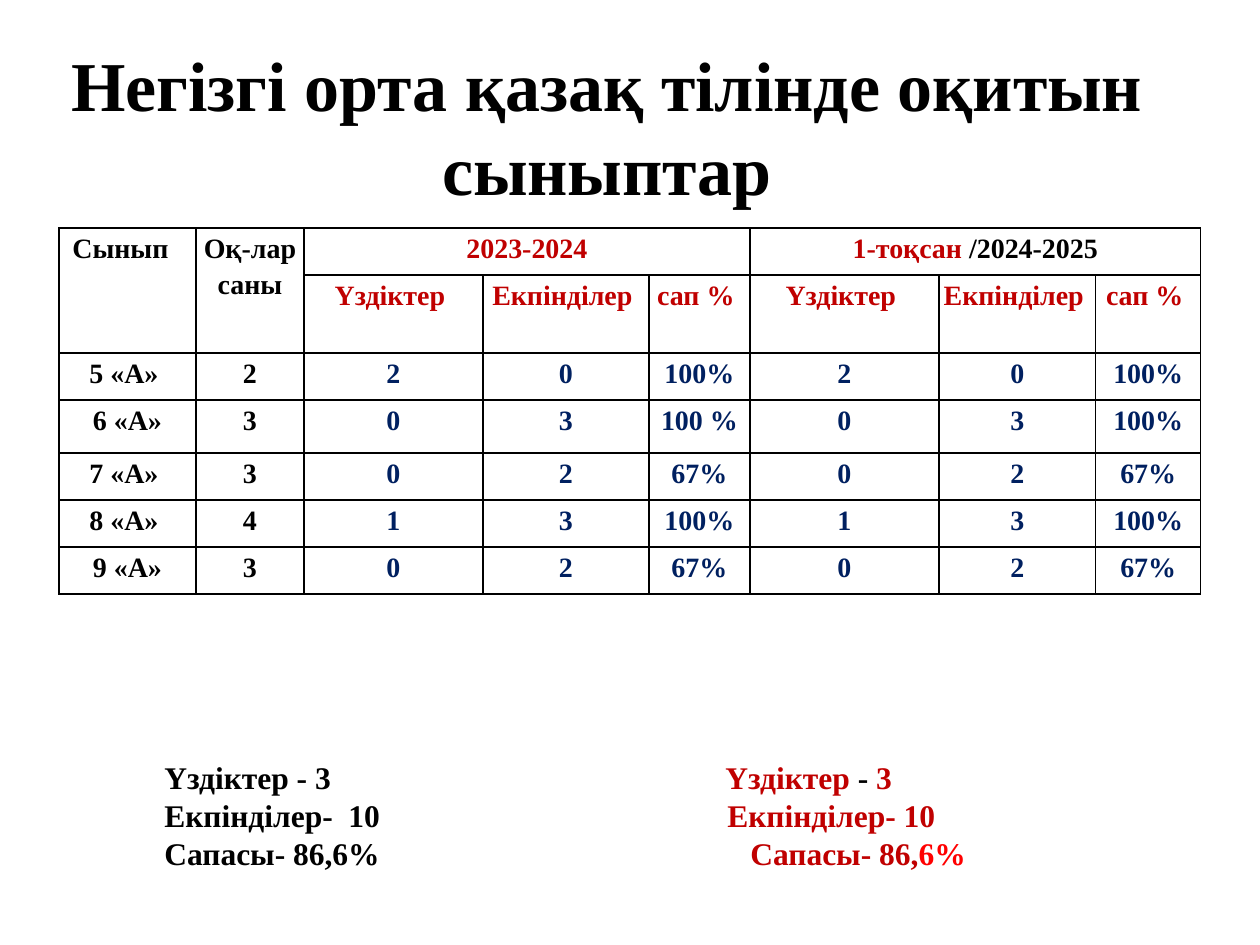
from dataclasses import dataclass

import pptx
import pptx.dml.color
import pptx.enum.text
import pptx.oxml
import pptx.oxml.ns
import pptx.util

PX = 914400 // 126
FONT = "Times New Roman"
COLORS = {"black": "000000", "crimson": "C00000", "navy": "002060", "red": "FF0000"}


@dataclass
class Span:
    text: str
    color: str = "black"


@dataclass
class Cell:
    row: int
    column: int
    spans: list[Span]
    row_span: int = 1
    column_span: int = 1
    right_margin: int = 4


@dataclass
class SummaryLine:
    total: str
    tab: int
    quarter: list[Span]


def px(length: int) -> int:
    return pptx.util.Emu(length * PX)


def add_spans(para, spans: list[Span], size: int) -> None:
    for span in spans:
        run = para.add_run()
        run.text = span.text
        run.font.name = FONT
        run.font.size = pptx.util.Pt(size)
        run.font.bold = True
        run.font.color.rgb = pptx.dml.color.RGBColor.from_string(COLORS[span.color])


def add_box(page, left: int, top: int, width: int, height: int):
    box = page.shapes.add_textbox(px(left), px(top), px(width), px(height))
    box.text_frame.word_wrap = True
    return box.text_frame


def add_tab_stop(para, position: int) -> None:
    tabs = pptx.oxml.parse_xml(
        f'<a:tabLst {pptx.oxml.ns.nsdecls("a")}><a:tab pos="{px(position)}" algn="l"/></a:tabLst>'
    )
    para._p.get_or_add_pPr().append(tabs)


def style_cell(cell) -> None:
    properties = cell._tc.get_or_add_tcPr()
    for side in ("lnL", "lnR", "lnT", "lnB"):
        properties.append(pptx.oxml.parse_xml(
            f'<a:{side} {pptx.oxml.ns.nsdecls("a")} w="12700"><a:solidFill>'
            f'<a:srgbClr val="{COLORS["black"]}"/></a:solidFill></a:{side}>'
        ))
    cell.fill.background()
    cell.margin_left = cell.margin_right = px(4)
    cell.margin_top, cell.margin_bottom = px(1), 0


def fill_cell(table, item: Cell) -> None:
    cell = table.cell(item.row, item.column)
    if item.row_span * item.column_span > 1:
        cell.merge(table.cell(item.row + item.row_span - 1,
                              item.column + item.column_span - 1))
    cell.margin_right = px(item.right_margin)
    para = cell.text_frame.paragraphs[0]
    para.alignment = pptx.enum.text.PP_ALIGN.CENTER
    para.line_spacing = 1.15
    add_spans(para, item.spans, 16)


# Table content
COLUMN_WIDTHS = [137, 108, 179, 166, 101, 189, 157, 105]
ROW_HEIGHTS = [47, 78, 47, 53, 47, 47, 47]
MEASURES = ["Үздіктер ", "Екпінділер ", "сап % "]
CLASSES = [
    ["5 «А» ", "2", "2", "0", "100%", "2", "0", "100%"],
    ["6 «А»", "3", "0", "3", "100 %", "0", "3", "100%"],
    ["7 «А» ", "3", "0", "2", "67%", "0", "2", "67%"],
    ["8 «А» ", "4", "1", "3", "100%", "1", "3", "100%"],
    ["9 «А»", "3", "0", "2", "67%", "0", "2", "67%"],
]
CELLS = [
    Cell(0, 0, [Span("Сынып")], row_span=2, right_margin=18),
    Cell(0, 1, [Span("Оқ-лар саны")], row_span=2),
    Cell(0, 2, [Span("2023-2024", "crimson")], column_span=3),
    Cell(0, 5, [Span("1-тоқсан", "crimson"), Span(" /2024-2025")], column_span=3),
]
CELLS += [Cell(1, column, [Span(text, "crimson")])
          for column, text in enumerate(MEASURES * 2, start=2)]
CELLS += [Cell(row, column, [Span(text, "black" if column < 2 else "navy")])
          for row, values in enumerate(CLASSES, start=2)
          for column, text in enumerate(values)]

# Totals: last year on the left, first quarter after the tab
SUMMARY = [
    SummaryLine("Үздіктер - 3", 561,
                [Span("Үздіктер", "crimson"), Span(" - "), Span("3", "crimson")]),
    SummaryLine("Екпінділер-  10", 563, [Span("Екпінділер- 10", "crimson")]),
    SummaryLine("Сапасы- 86,6%", 586,
                [Span("Сапасы- 86,", "crimson"), Span("6%", "red")]),
]


def add_title(page) -> None:
    para = add_box(page, 36, 35, 1142, 183).paragraphs[0]
    para.alignment = pptx.enum.text.PP_ALIGN.CENTER
    add_spans(para, [Span("Негізгі орта қазақ тілінде оқитын сыныптар")], 40)


def add_results(page) -> None:
    frame = page.shapes.add_table(len(ROW_HEIGHTS), len(COLUMN_WIDTHS), px(59), px(228),
                                  px(sum(COLUMN_WIDTHS)), px(sum(ROW_HEIGHTS)))
    table = frame.table
    table.first_row = table.horz_banding = False
    for column, width in zip(table.columns, COLUMN_WIDTHS):
        column.width = px(width)
    for row, height in zip(table.rows, ROW_HEIGHTS):
        row.height = px(height)
    for cell in table.iter_cells():
        style_cell(cell)
    for item in CELLS:
        fill_cell(table, item)


def add_summary(page) -> None:
    text = add_box(page, 152, 752, 1022, 127)
    for index, line in enumerate(SUMMARY):
        para = text.add_paragraph() if index else text.paragraphs[0]
        add_tab_stop(para, line.tab)
        add_spans(para, [Span(line.total + "\t"), *line.quarter], 18)


def main() -> None:
    deck = pptx.Presentation()
    deck.slide_width, deck.slide_height = px(1260), px(945)
    page = deck.slides.add_slide(deck.slide_layouts[6])
    add_title(page)
    add_results(page)
    add_summary(page)
    deck.save("out.pptx")


if __name__ == "__main__":
    main()
